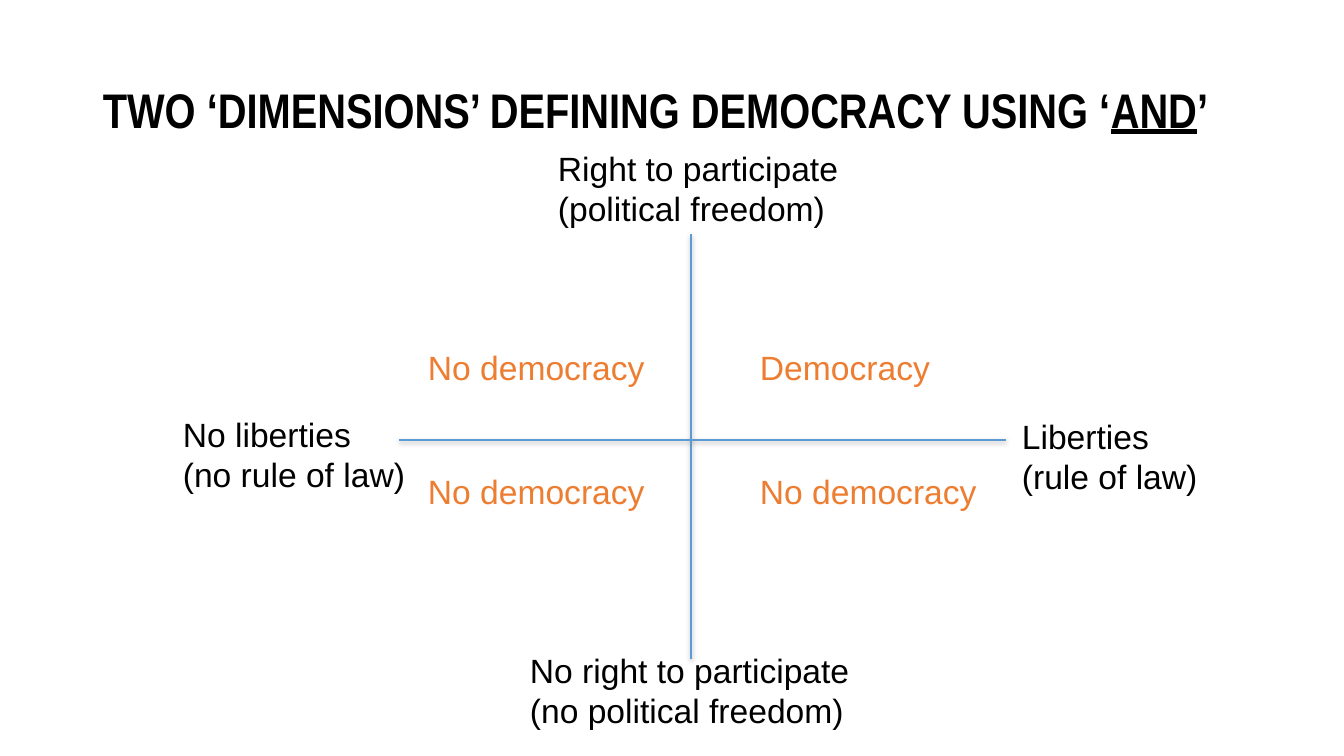
from lxml import etree
from pptx import Presentation
from pptx.dml.color import RGBColor
from pptx.enum.shapes import MSO_CONNECTOR
from pptx.enum.text import MSO_ANCHOR, MSO_AUTO_SIZE
from pptx.oxml.ns import qn
from pptx.util import Pt

PX = 914400 / 100.8
LINE = MSO_CONNECTOR.STRAIGHT
MIDDLE = MSO_ANCHOR.MIDDLE
GROW, FIXED = MSO_AUTO_SIZE.SHAPE_TO_FIT_TEXT, MSO_AUTO_SIZE.NONE
BLACK, BLUE, ORANGE, GRAY = "000000", "5B9BD5", "ED7D31", "808080"


def px(*nums):
    return [round(n * PX) for n in nums]


def color(code):
    return RGBColor.from_string(code)


class Board:
    title_font = {"name": "Arial Narrow", "size": Pt(34.7), "bold": True}
    label_font = {"name": "Arial", "size": Pt(24)}

    def __init__(self, deck):
        self.slide = deck.slides.add_slide(deck.slide_layouts[6])

    def frame(self, box, **style):
        frame = self.slide.shapes.add_textbox(*px(*box)).text_frame
        for key, value in style.items():
            setattr(frame, key, value)
        return frame

    def add_text(self, para, text, tint, style):
        run = para.add_run()
        run.text = text
        run.font.color.rgb = color(tint)
        for key, value in style.items():
            setattr(run.font, key, value)

    def title(self, box, parts):
        """Set the title from (text, underlined) parts."""
        frame = self.frame(box, word_wrap=True, auto_size=FIXED,
                           vertical_anchor=MIDDLE)
        para = frame.paragraphs[0]
        para.line_spacing = 0.9
        for text, under in parts:
            self.add_text(para, text, BLACK,
                          {**self.title_font, "underline": under})

    def label(self, box, lines, tint=BLACK):
        frame = self.frame(box, word_wrap=False, auto_size=GROW)
        for i, text in enumerate(lines):
            para = frame.add_paragraph() if i else frame.paragraphs[0]
            self.add_text(para, text, tint, self.label_font)

    def axis(self, *ends):
        line = self.slide.shapes.add_connector(LINE, *px(*ends))
        line.line.color.rgb = color(BLUE)
        line.line.width = Pt(2)
        self.shade(line)

    def shade(self, line):
        """Give a line a soft shadow straight below it."""
        effects = etree.SubElement(line._element.spPr, qn("a:effectLst"))
        shadow = etree.SubElement(effects, qn("a:outerShdw"), {
            "blurRad": str(Pt(3.1)), "dist": str(Pt(1.6)),
            "dir": "5400000", "rotWithShape": "0"})
        tint = etree.SubElement(shadow, qn("a:srgbClr"), val=GRAY)
        etree.SubElement(tint, qn("a:alpha"), val="38000")


def main():
    deck = Presentation()
    deck.slide_width, deck.slide_height = px(1344, 756)
    board = Board(deck)

    board.title((93, 40, 1159, 146), [
        ("TWO ‘DIMENSIONS’ DEFINING DEMOCRACY USING ‘", False),
        ("AND", True),
        ("’", False)])

    board.axis(691, 234, 691, 659)
    board.axis(399, 440, 1006, 440)

    poles = [
        (520, 645, 343, "No right to participate", "(no political freedom)"),
        (548, 143, 303, "Right to participate", "(political freedom)"),
        (173, 409, 245, "No liberties", "(no rule of law)"),
        (1012, 411, 198, "Liberties", "(rule of law)")]
    for x, y, width, *lines in poles:
        board.label((x, y, width, 92), lines)

    left, right, upper, lower = 418, 750, 342, 466
    fields = [
        (right, upper, 193, "Democracy"),
        (left, lower, 239, "No democracy"),
        (left, upper, 239, "No democracy"),
        (right, lower, 239, "No democracy")]
    for x, y, width, text in fields:
        board.label((x, y, width, 50), [text], ORANGE)

    deck.save("out.pptx")


if __name__ == "__main__":
    main()
